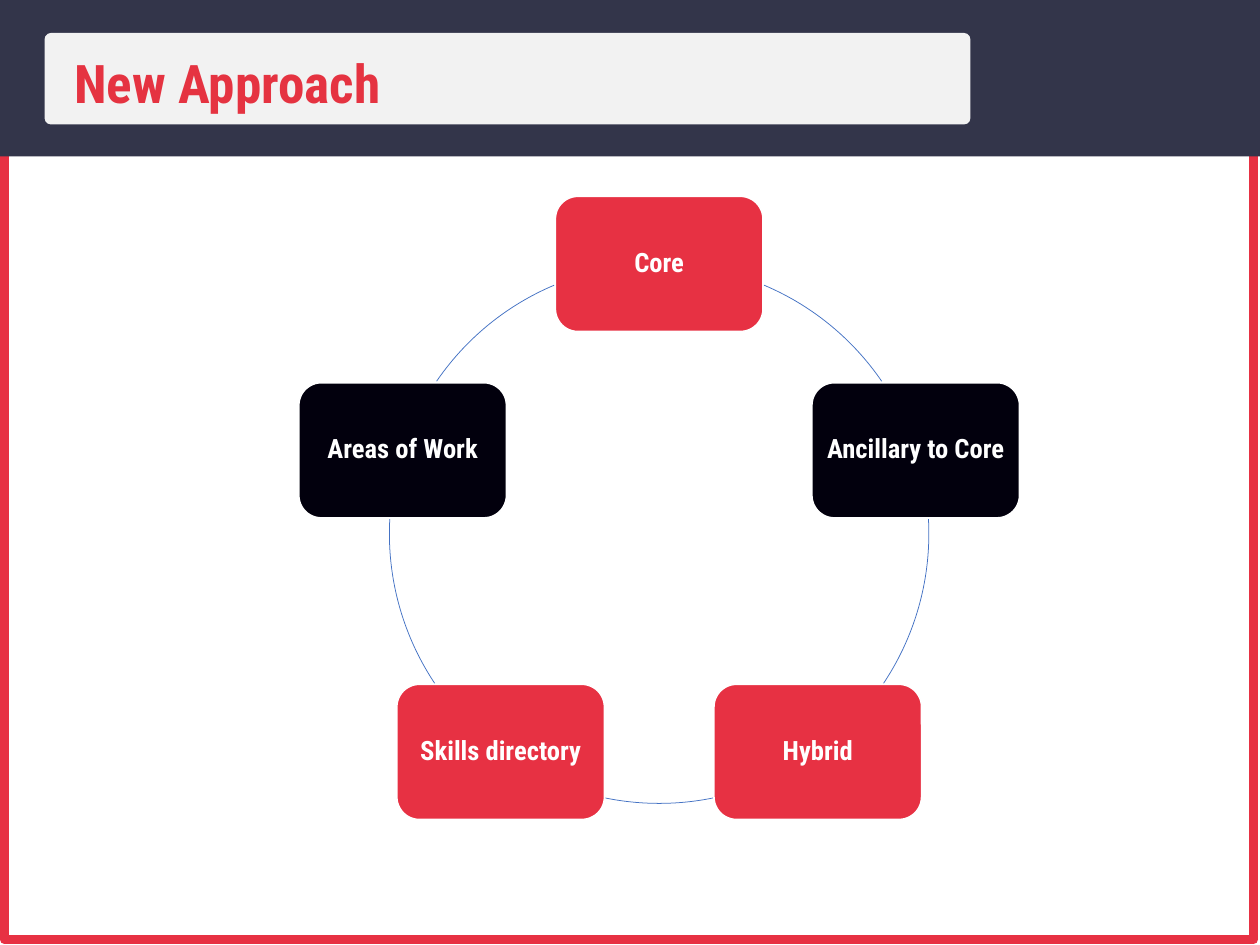
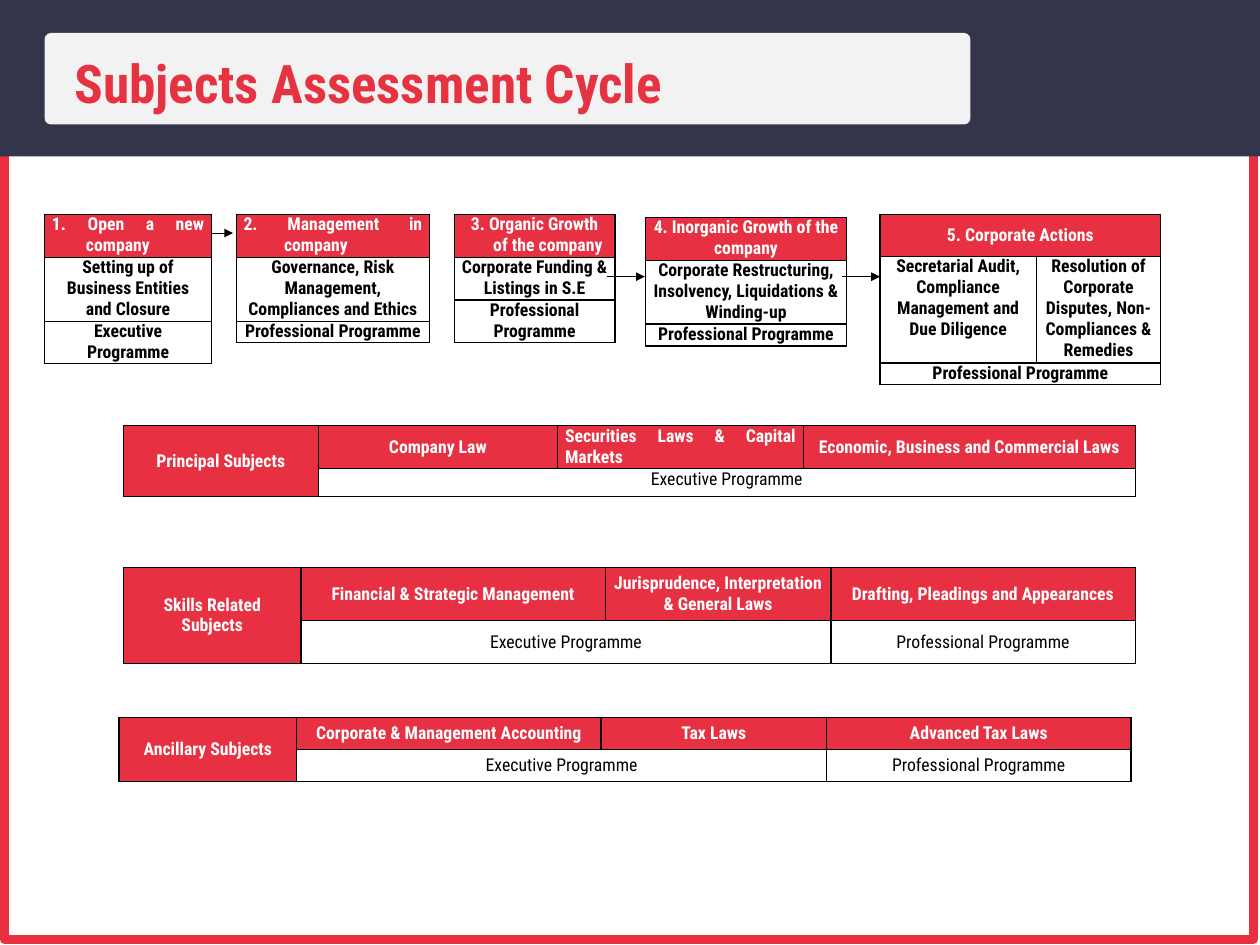
"""Build two slides on a new approach to subjects and their assessment cycle."""
from dataclasses import dataclass, field
from enum import Enum
from math import cos, radians, sin
from typing import Any, Optional

from lxml import etree
from pptx import Presentation
from pptx import util as u
from pptx.dml import color
from pptx.enum import shapes, text
from pptx.oxml import ns
from pptx.slide import Slide

Pt = u.Pt
Align = text.PP_ALIGN
Anchor = text.MSO_ANCHOR
Preset = shapes.MSO_SHAPE


@dataclass(frozen=True)
class Theme:
    font: str = "Roboto Condensed"
    red: str = "E73143"
    title_red: str = "E53341"
    navy: str = "33354A"
    panel: str = "F2F2F2"
    ink: str = "02000D"
    black: str = "000000"
    white: str = "FFFFFF"
    ring: str = "4472C4"
    title_size: float = 36
    node_size: float = 18
    table_size: float = 12


THEME = Theme()
WIDTH, HEIGHT = 852.5, 639.36


@dataclass(frozen=True)
class Box:
    left: float
    top: float
    width: float
    height: float

    def points(self) -> tuple[u.Length, ...]:
        return tuple(Pt(v) for v in (self.left, self.top, self.width, self.height))


class Look(Enum):
    HEAD = (THEME.red, THEME.white, True)
    SUBJECT = (None, THEME.black, True)
    LEVEL = (None, THEME.black, False)


@dataclass(frozen=True)
class Entry:
    words: str
    look: Look = Look.HEAD
    row: int = 0
    col: int = 0
    rows: int = 1
    cols: int = 1
    align: Align = Align.CENTER
    anchor: Anchor = Anchor.MIDDLE
    hang: float = 0


@dataclass(frozen=True)
class Grid:
    left: float
    top: float
    cols: list[float]
    rows: list[float]
    entries: list[Entry] = field(default_factory=list)


@dataclass(frozen=True)
class Arrow:
    start: float
    end: float
    y: float


@dataclass(frozen=True)
class Node:
    words: str
    fill: str


@dataclass(frozen=True)
class Arc:
    start: float
    end: float


def assign(target: Any, values: dict[str, Any]) -> None:
    """Set each named attribute on the target."""
    for name, value in values.items():
        setattr(target, name, value)


def rgb(code: str) -> color.RGBColor:
    """Turn a hex code into a colour."""
    return color.RGBColor.from_string(code)


def write(paragraph: Any, words: str, size: float, ink: str, bold: bool = True, **layout: Any) -> None:
    """Write one formatted run into a paragraph."""
    run = paragraph.add_run()
    run.text = words
    assign(run.font, {"name": THEME.font, "size": Pt(size), "bold": bold})
    run.font.color.rgb = rgb(ink)
    assign(paragraph, layout)


def draw(slide: Slide, preset: Preset, box: Box, fill: Optional[str] = None,
         line: Optional[str] = None, weight: float = 1) -> Any:
    """Add a flat preset shape."""
    shape = slide.shapes.add_shape(preset, *box.points())
    shape.shadow.inherit = False
    if fill:
        shape.fill.solid()
        shape.fill.fore_color.rgb = rgb(fill)
    else:
        shape.fill.background()
    if line:
        shape.line.color.rgb = rgb(line)
        shape.line.width = Pt(weight)
    else:
        shape.line.fill.background()
    return shape


def start_slide(deck: Any, heading: str) -> Slide:
    """Add a blank slide with the shared border, band and title."""
    slide = deck.slides.add_slide(deck.slide_layouts[6])
    draw(slide, Preset.RECTANGLE, Box(2.9, 89.3, 845.3, 546.5), line=THEME.red, weight=6)
    draw(slide, Preset.RECTANGLE, Box(0, 0, WIDTH, 105.8), THEME.navy)
    panel = draw(slide, Preset.ROUNDED_RECTANGLE, Box(30.2, 22.3, 626.4, 61.9), THEME.panel)
    panel.adjustments[0] = 0.07
    frame = slide.shapes.add_textbox(*Box(43.2, 27.4, 562.3, 52).points()).text_frame
    frame.word_wrap = True
    write(frame.paragraphs[0], heading, THEME.title_size, THEME.title_red,
          alignment=Align.JUSTIFY, line_spacing=1.07, space_after=Pt(7.1))
    return slide


def draw_cycle(slide: Slide, nodes: list[Node], arcs: list[Arc]) -> None:
    """Place nodes evenly round a circle and draw the arcs between them."""
    center_x, center_y, radius = 446, 361.1, 182.5
    width, height = 140.4, 91.4
    circle = Box(center_x - radius, center_y - radius, 2 * radius, 2 * radius)
    for arc in arcs:
        curve = draw(slide, Preset.ARC, circle, line=THEME.ring, weight=0.5)
        for index, angle in enumerate((arc.start, arc.end)):
            curve.adjustments[index] = angle % 360 * 0.6
    for index, node in enumerate(nodes):
        angle = radians(360 / len(nodes) * index - 90)
        box = Box(center_x + radius * cos(angle) - width / 2,
                  center_y + radius * sin(angle) - height / 2, width, height)
        frame = draw(slide, Preset.ROUNDED_RECTANGLE, box, node.fill, THEME.white).text_frame
        margins = {f"margin_{side}": Pt(5) for side in ("left", "top", "right", "bottom")}
        assign(frame, {"word_wrap": True, "vertical_anchor": Anchor.MIDDLE, **margins})
        write(frame.paragraphs[0], node.words, THEME.node_size, THEME.white,
              alignment=Align.CENTER, line_spacing=0.9)


def draw_arrow(slide: Slide, arrow: Arrow) -> None:
    """Add a horizontal arrow."""
    line = slide.shapes.add_connector(shapes.MSO_CONNECTOR.STRAIGHT, Pt(arrow.start), Pt(arrow.y),
                                      Pt(arrow.end), Pt(arrow.y))
    line.line.color.rgb = rgb(THEME.black)
    line.line.width = Pt(0.75)
    etree.SubElement(line.line._get_or_add_ln(), ns.qn("a:tailEnd"), type="triangle")
    etree.SubElement(line._element.spPr, ns.qn("a:effectLst"))


def outline(cell: Any) -> None:
    """Draw all four borders of a cell."""
    props = cell._tc.get_or_add_tcPr()
    for side in ("lnL", "lnR", "lnT", "lnB"):
        border = etree.SubElement(props, ns.qn(f"a:{side}"), w=str(Pt(1)))
        paint = etree.SubElement(border, ns.qn("a:solidFill"))
        etree.SubElement(paint, ns.qn("a:srgbClr"), val=THEME.black)


def draw_grid(slide: Slide, grid: Grid) -> None:
    """Add a bordered table and fill in its entries."""
    box = Box(grid.left, grid.top, sum(grid.cols), sum(grid.rows))
    table = slide.shapes.add_table(len(grid.rows), len(grid.cols), *box.points()).table
    assign(table, {"first_row": False, "horz_banding": False})
    for column, width in zip(table.columns, grid.cols):
        column.width = Pt(width)
    for row, height in zip(table.rows, grid.rows):
        row.height = Pt(height)
    for cell in table.iter_cells():
        outline(cell)
        cell.fill.background()
        assign(cell, {"margin_left": Pt(5), "margin_right": Pt(5), "margin_top": 0, "margin_bottom": 0})
        cell.text_frame.paragraphs[0].font.size = Pt(1)
    for entry in grid.entries:
        cell = table.cell(entry.row, entry.col)
        if entry.rows * entry.cols > 1:
            cell.merge(table.cell(entry.row + entry.rows - 1, entry.col + entry.cols - 1))
        fill, ink, bold = entry.look.value
        if fill:
            cell.fill.solid()
            cell.fill.fore_color.rgb = rgb(fill)
        cell.vertical_anchor = entry.anchor
        paragraph = cell.text_frame.paragraphs[0]
        write(paragraph, entry.words, THEME.table_size, ink, bold, alignment=entry.align)
        if entry.hang:
            props = paragraph._p.get_or_add_pPr()
            props.set("marL", str(Pt(entry.hang)))
            props.set("indent", str(-Pt(entry.hang)))


def stage(left: float, top: float, width: float, rows: list[float], head: str, subject: str,
          programme: str, align: Align = Align.CENTER, hang: float = 0) -> Grid:
    """Describe a one-column stage of the cycle."""
    return Grid(left, top, [width], rows, [
        Entry(head, align=align, anchor=Anchor.TOP, hang=hang),
        Entry(subject, Look.SUBJECT, 1, anchor=Anchor.TOP),
        Entry(programme, Look.SUBJECT, 2, anchor=Anchor.TOP)])


def group(left: float, top: float, cols: list[float], rows: list[float], name: str,
          subjects: list[str], levels: list[Entry], justified: str = "") -> Grid:
    """Describe a subject group with its programme levels below."""
    heads = [Entry(words, col=col, align=Align.JUSTIFY if words == justified else Align.CENTER)
             for col, words in enumerate(subjects, 1)]
    return Grid(left, top, cols, rows, [Entry(name, rows=2), *heads, *levels])


EXECUTIVE = "Executive Programme"
PROFESSIONAL = "Professional Programme"
SECURITIES = "Securities Laws & Capital Markets"
SPLIT_COLS = [120.2, 205.9, 152.6, 205.9]
SPLIT_LEVELS = [Entry(EXECUTIVE, Look.LEVEL, 1, 1, cols=2), Entry(PROFESSIONAL, Look.LEVEL, 1, 3)]

NODES = [Node("Core", THEME.red), Node("Ancillary to Core", THEME.ink), Node("Hybrid", THEME.red),
         Node("Skills directory", THEME.red), Node("Areas of Work", THEME.ink)]
ARCS = [Arc(-67.1, -34.4), Arc(-3.1, 33.7), Arc(78.5, 101.5), Arc(146.3, 183.1), Arc(214.4, 247.1)]
ARROWS = [Arrow(138.2, 157.7, 157.7), Arrow(410.4, 436.3, 187.2), Arrow(569.5, 595.4, 187.2)]

GRIDS = [
    stage(30.2, 145.1, 113, [29, 43.2, 28.4], "1. Open a new company",
          "Setting up of Business Entities and Closure", EXECUTIVE, Align.JUSTIFY, 23),
    stage(159.8, 145.1, 131, [29, 43.2, 14.4], "2. Management in company",
          "Governance, Risk Management, Compliances and Ethics", PROFESSIONAL, Align.JUSTIFY, 27.4),
    stage(307.4, 145.1, 108.7, [29, 28.4, 29], "3. Organic Growth of the company",
          "Corporate Funding & Listings in S.E", PROFESSIONAL, hang=18),
    stage(436.8, 147, 136, [29, 42.8, 14.8], "4. Inorganic Growth of the company",
          "Corporate Restructuring, Insolvency, Liquidations & Winding-up", PROFESSIONAL),
    Grid(595.4, 145.1, [105.8, 84.2], [28.4, 71.6, 14.8], [
        Entry("5. Corporate Actions", cols=2),
        Entry("Secretarial Audit, Compliance Management and Due Diligence", Look.SUBJECT, 1,
              anchor=Anchor.TOP),
        Entry("Resolution of Corporate Disputes, Non-Compliances & Remedies", Look.SUBJECT, 1, 1,
              anchor=Anchor.TOP),
        Entry(PROFESSIONAL, Look.SUBJECT, 2, cols=2, anchor=Anchor.TOP)]),
    group(83.5, 288, [131.8, 162, 166.3, 224.6], [29, 19], "Principal Subjects",
          ["Company Law", SECURITIES, "Economic, Business and Commercial Laws"],
          [Entry(EXECUTIVE, Look.LEVEL, 1, 1, cols=3, anchor=Anchor.TOP)], SECURITIES),
    group(83.5, 383.8, SPLIT_COLS, [36, 29], "Skills Related Subjects",
          ["Financial & Strategic Management", "Jurisprudence, Interpretation & General Laws",
           "Drafting, Pleadings and Appearances"], SPLIT_LEVELS),
    group(80.6, 485.3, SPLIT_COLS, [21.6, 22], "Ancillary Subjects",
          ["Corporate & Management Accounting", "Tax Laws", "Advanced Tax Laws"], SPLIT_LEVELS),
]


def main() -> None:
    """Build and save the deck."""
    deck = Presentation()
    assign(deck, {"slide_width": Pt(WIDTH), "slide_height": Pt(HEIGHT)})
    draw_cycle(start_slide(deck, "New Approach"), NODES, ARCS)
    assessment = start_slide(deck, "Subjects Assessment Cycle")
    for arrow in ARROWS:
        draw_arrow(assessment, arrow)
    for grid in GRIDS:
        draw_grid(assessment, grid)
    deck.save("out.pptx")


if __name__ == "__main__":
    main()
